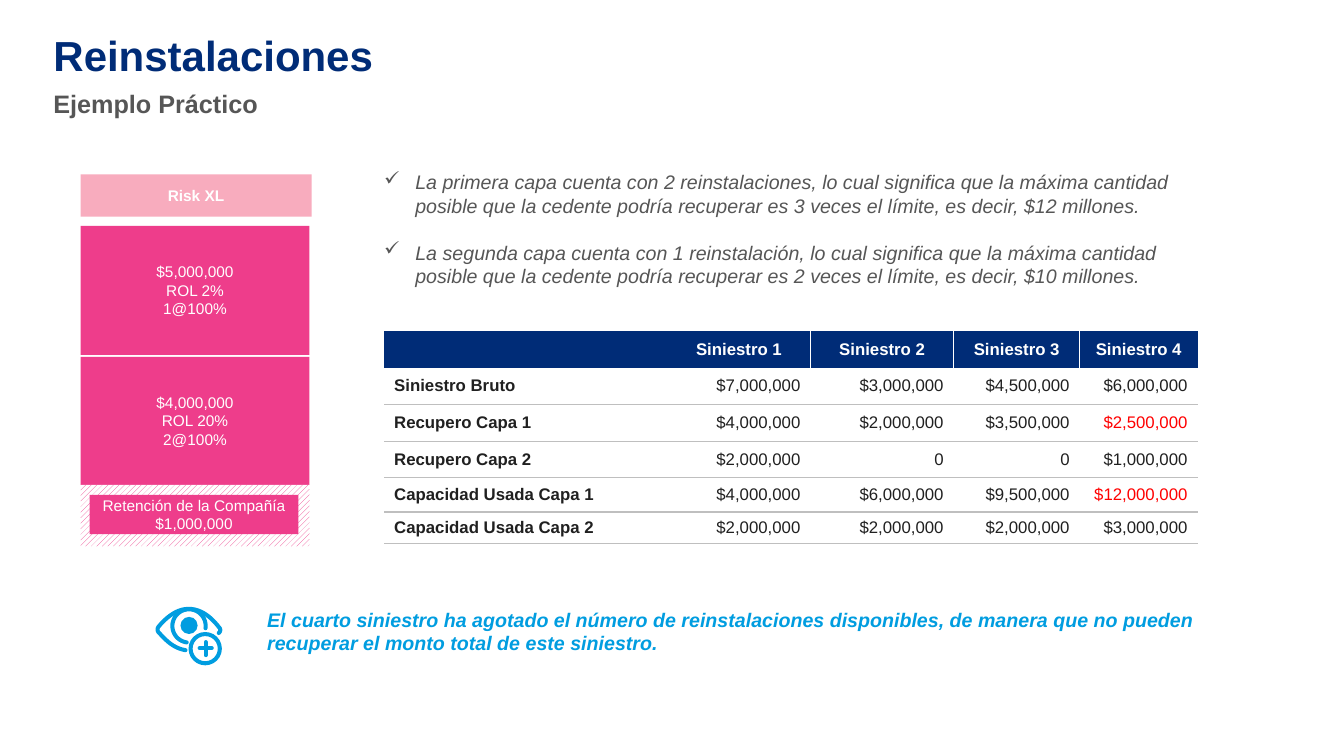
"""Build the reinstatements example slide with its layer tower, claims table and key message."""
from dataclasses import dataclass
from math import cos, radians, sin

from lxml.etree import SubElement
from pptx import Presentation
from pptx.dml.color import RGBColor
from pptx.enum.dml import MSO_PATTERN
from pptx.enum.shapes import MSO_SHAPE
from pptx.enum.text import MSO_ANCHOR, MSO_AUTO_SIZE, PP_ALIGN
from pptx.oxml.ns import qn
from pptx.util import Inches, Pt


@dataclass(frozen=True)
class Theme:
    font: str = "Arial"
    navy: RGBColor = RGBColor(0x00, 0x2C, 0x77)
    gray: RGBColor = RGBColor(0x56, 0x56, 0x56)
    ink: RGBColor = RGBColor(0x20, 0x20, 0x20)
    white: RGBColor = RGBColor(0xFF, 0xFF, 0xFF)
    pink: RGBColor = RGBColor(0xEE, 0x3D, 0x8B)
    light_pink: RGBColor = RGBColor(0xF8, 0xAC, 0xBE)
    blue: RGBColor = RGBColor(0x00, 0x9D, 0xE0)
    red: RGBColor = RGBColor(0xFF, 0x00, 0x00)
    rule: RGBColor = RGBColor(0xBF, 0xBF, 0xBF)
    title: int = 30
    subtitle: int = 18
    body: int = 14
    table: int = 12
    layer: int = 11
    icon_line: float = 2.9


theme = Theme()


def write(frame, text, size, color, bold=False, italic=False, align=PP_ALIGN.LEFT,
          anchor=MSO_ANCHOR.TOP, inset=None, bullet=None, gap=0):
    frame.word_wrap = True
    frame.vertical_anchor = anchor
    if inset is not None:
        frame.margin_left = frame.margin_right = Inches(inset)
        frame.margin_top = frame.margin_bottom = Inches(inset)
    frame.text = text
    for index, paragraph in enumerate(frame.paragraphs):
        paragraph.alignment = align
        if index and gap:
            paragraph.space_before = Pt(gap)
        if bullet:
            properties = paragraph._p.get_or_add_pPr()
            properties.set("marL", str(Inches(0.31)))
            properties.set("indent", str(-Inches(0.31)))
            SubElement(properties, qn("a:buChar"), char=bullet)
        font = paragraph.font
        font.name, font.size, font.bold, font.italic = theme.font, Pt(size), bold, italic
        font.color.rgb = color
        for run in paragraph.runs:
            run.font.name, run.font.size = theme.font, Pt(size)
            run.font.bold, run.font.italic = bold, italic
            run.font.color.rgb = color


def stroke(shapes, points):
    corners = [(Inches(x), Inches(y)) for x, y in points]
    builder = shapes.build_freeform(*corners[0])
    builder.add_line_segments(corners[1:], close=False)
    shape = builder.convert_to_shape()
    shape.shadow.inherit = False
    shape.fill.background()
    shape.line.color.rgb = theme.blue
    shape.line.width = Pt(theme.icon_line)
    line = shape.line._get_or_add_ln()
    line.set("cap", "rnd")
    SubElement(line, qn("a:round"))


presentation = Presentation()
presentation.slide_width, presentation.slide_height = Inches(13.33), Inches(7.5)
slide = presentation.slides.add_slide(presentation.slide_layouts[5])

title = slide.shapes.title
title.left, title.top, title.width, title.height = map(Inches, (0.53, 0.39, 12.27, 0.54))
write(title.text_frame, "Reinstalaciones", theme.title, theme.navy, bold=True, inset=0)
title.text_frame.auto_size = MSO_AUTO_SIZE.NONE
title.text_frame.paragraphs[0].line_spacing = 0.8

texts = [
    ((0.53, 0.88, 12.28, 0.35), "Ejemplo Práctico",
     dict(size=theme.subtitle, color=theme.gray, bold=True)),
    ((3.81, 1.69, 8.06, 1.41),
     "La primera capa cuenta con 2 reinstalaciones, lo cual significa que la máxima cantidad "
     "posible que la cedente podría recuperar es 3 veces el límite, es decir, $12 millones.\n"
     "La segunda capa cuenta con 1 reinstalación, lo cual significa que la máxima cantidad "
     "posible que la cedente podría recuperar es 2 veces el límite, es decir, $10 millones.",
     dict(size=theme.body, color=theme.gray, italic=True, bullet="✓", gap=16.5)),
    ((2.65, 6.03, 9.73, 0.47),
     "El cuarto siniestro ha agotado el número de reinstalaciones disponibles, de manera que "
     "no pueden recuperar el monto total de este siniestro.",
     dict(size=theme.body, color=theme.blue, bold=True, italic=True)),
]
for box, text, style in texts:
    textbox = slide.shapes.add_textbox(*map(Inches, box))
    write(textbox.text_frame, text, inset=0, **style)

layers = [
    ((0.8, 1.73, 2.29, 0.42), theme.light_pink, "Risk XL", True),
    ((0.8, 2.24, 2.27, 1.28), theme.pink, "$5,000,000\nROL 2%\n1@100%", False),
    ((0.8, 3.54, 2.27, 1.27), theme.pink, "$4,000,000\nROL 20%\n2@100%", False),
    ((0.8, 4.81, 2.27, 0.61), None, "", False),
    ((0.89, 4.91, 2.07, 0.39), theme.pink, "Retención de la Compañía $1,000,000", False),
]
for box, color, text, bold in layers:
    layer = slide.shapes.add_shape(MSO_SHAPE.RECTANGLE, *map(Inches, box))
    layer.shadow.inherit = False
    layer.line.fill.background()
    if color is None:
        layer.fill.patterned()
        layer.fill.pattern = MSO_PATTERN.WIDE_UPWARD_DIAGONAL
        layer.fill.fore_color.rgb, layer.fill.back_color.rgb = theme.pink, theme.white
    else:
        layer.fill.solid()
        layer.fill.fore_color.rgb = color
        write(layer.text_frame, text, theme.layer, theme.white, bold=bold,
              align=PP_ALIGN.CENTER, anchor=MSO_ANCHOR.MIDDLE)

claims = [
    ["", "Siniestro 1", "Siniestro 2", "Siniestro 3", "Siniestro 4"],
    ["Siniestro Bruto", "$7,000,000", "$3,000,000", "$4,500,000", "$6,000,000"],
    ["Recupero Capa 1", "$4,000,000", "$2,000,000", "$3,500,000", "$2,500,000"],
    ["Recupero Capa 2", "$2,000,000", "0", "0", "$1,000,000"],
    ["Capacidad Usada Capa 1", "$4,000,000", "$6,000,000", "$9,500,000", "$12,000,000"],
    ["Capacidad Usada Capa 2", "$2,000,000", "$2,000,000", "$2,000,000", "$3,000,000"],
]
exhausted = {(2, 4), (4, 4)}
table = slide.shapes.add_table(6, 5, *map(Inches, (3.81, 3.28, 8.06, 2.11))).table
table.first_row = table.horz_banding = False
table._tbl.tblPr.find(qn("a:tableStyleId")).text = "{2D5ABB26-0587-4C30-8999-92F81FD0307C}"
for column, width in zip(table.columns, (2.81, 1.42, 1.42, 1.25, 1.17)):
    column.width = Inches(width)
for row, height in zip(table.rows, (0.37, 0.36, 0.37, 0.36, 0.34, 0.31)):
    row.height = Inches(height)
for r, values in enumerate(claims):
    for c, value in enumerate(values):
        cell = table.cell(r, c)
        header = r == 0
        if header:
            color, align = theme.white, PP_ALIGN.CENTER
            borders = ["lnL"] * (c > 1) + ["lnR"] * (0 < c < 4)
        else:
            color = theme.red if (r, c) in exhausted else theme.ink
            align = PP_ALIGN.RIGHT if c else PP_ALIGN.LEFT
            borders = ["lnB"]
        write(cell.text_frame, value, theme.table, color, bold=header or c == 0, align=align)
        cell.vertical_anchor = MSO_ANCHOR.MIDDLE
        cell.margin_left = cell.margin_right = Inches(0.1)
        cell.margin_top = cell.margin_bottom = 0
        for side in borders:
            border = SubElement(cell._tc.get_or_add_tcPr(), qn(f"a:{side}"), w=str(Pt(1)))
            paint = SubElement(border, qn("a:solidFill"))
            SubElement(paint, qn("a:srgbClr"), val=str(theme.white if header else theme.rule))
        if header:
            cell.fill.solid()
            cell.fill.fore_color.rgb = theme.navy
        else:
            cell.fill.background()

icon = slide.shapes.add_group_shape().shapes
pupil = icon.add_shape(MSO_SHAPE.OVAL, *map(Inches, (1.79, 6.12, 0.17, 0.17)))
pupil.fill.solid()
pupil.fill.fore_color.rgb = theme.blue
pupil.line.fill.background()
badge = icon.add_shape(MSO_SHAPE.OVAL, *map(Inches, (1.89, 6.29, 0.29, 0.29)))
badge.fill.background()
badge.line.color.rgb = theme.blue
badge.line.width = Pt(theme.icon_line)
for circle in (pupil, badge):
    circle.shadow.inherit = False

eyelid = [(2.17, 6.28)]
eyelid_curves = [
    ((2.19, 6.26), (2.19, 6.24), (2.17, 6.22)),
    ((2.1, 6.13), (2.0, 6.04), (1.87, 6.04)),
    ((1.73, 6.04), (1.62, 6.16), (1.57, 6.22)),
    ((1.56, 6.24), (1.56, 6.25), (1.57, 6.27)),
    ((1.61, 6.31), (1.7, 6.43), (1.84, 6.45)),
]
for curve in eyelid_curves:
    controls = (eyelid[-1], *curve)
    for step in range(1, 13):
        t = step / 12
        weights = ((1 - t) ** 3, 3 * t * (1 - t) ** 2, 3 * t * t * (1 - t), t ** 3)
        eyelid.append(tuple(sum(w * p[axis] for w, p in zip(weights, controls))
                            for axis in (0, 1)))
iris = [(1.875 + 0.165 * cos(radians(a)), 6.21 + 0.165 * sin(radians(a)))
        for a in range(98, 369, 6)]
for points in (eyelid, iris, [(1.98, 6.43), (2.1, 6.43)], [(2.04, 6.37), (2.04, 6.5)]):
    stroke(icon, points)

presentation.save("out.pptx")
